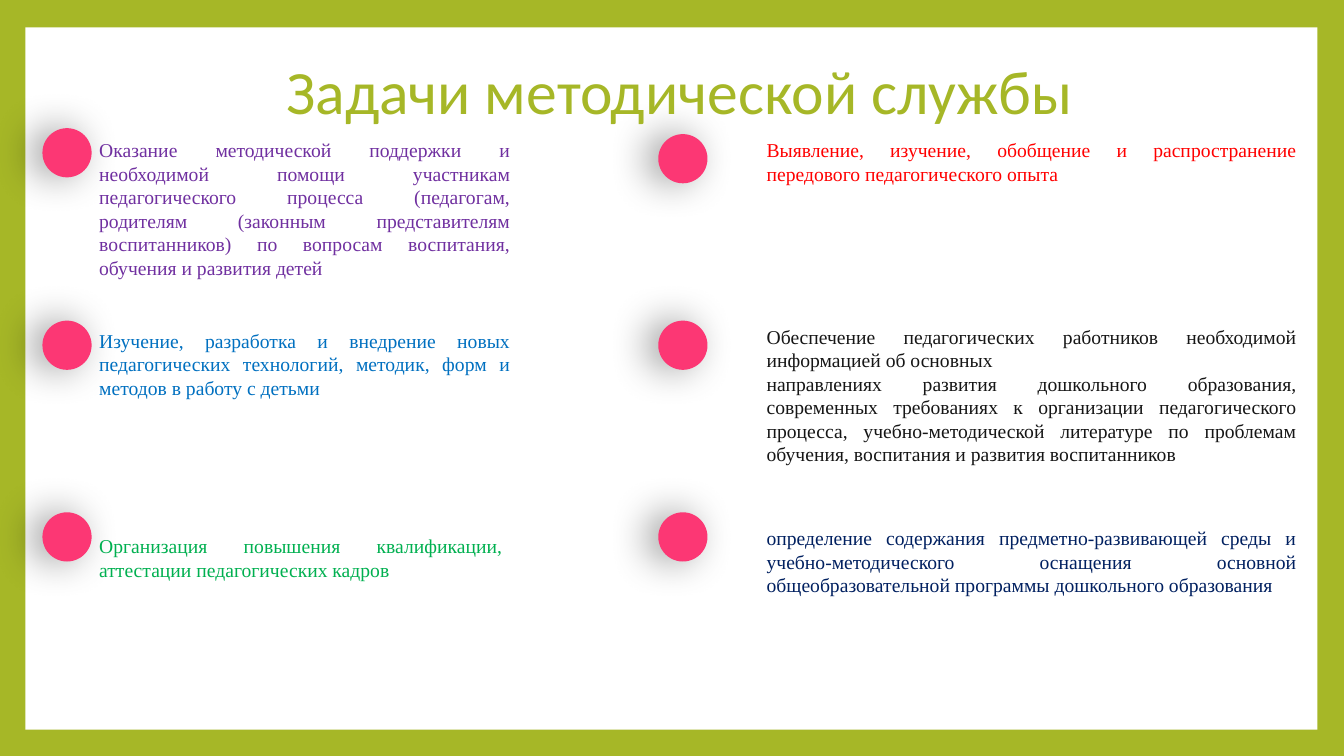
from dataclasses import dataclass

from lxml import etree
from pptx import Presentation
from pptx import util as u
from pptx.dml import color
from pptx.enum import shapes, text
from pptx.oxml import ns


@dataclass(frozen=True)
class Theme:
    green: str = "A6B727"
    panel: str = "FFFFFF"
    dot: str = "FC3774"
    shadow: str = "000000"
    title_font: str = "Calibri"
    body_font: str = "Times New Roman"
    title_size: int = 44
    body_size: int = 14


@dataclass(frozen=True)
class Column:
    dot_left: float
    text_left: float
    text_width: float


@dataclass(frozen=True)
class Task:
    column: Column
    dot_top: float
    text_top: float
    height: float
    ink: str
    words: str


THEME = Theme()
DOT_SIZE = 1.24
LEFT = Column(1.07, 2.31, 10.74)
LEFT_NARROW = Column(1.07, 2.31, 10.54)
RIGHT = Column(16.59, 19.13, 13.74)

TASKS = [
    Task(LEFT, 3.23, 3.38, 3.78, "7030A0",
         "Оказание методической поддержки и необходимой помощи участникам "
         "педагогического процесса (педагогам, родителям (законным представителям "
         "воспитанников) по вопросам воспитания, обучения и развития детей"),
    Task(LEFT, 8.08, 8.18, 1.98, "0070C0",
         "Изучение, разработка и внедрение новых педагогических технологий, "
         "методик, форм и методов в работу с детьми"),
    Task(LEFT_NARROW, 12.91, 13.36, 1.42, "00B050",
         "Организация повышения квалификации, аттестации педагогических кадров"),
    Task(RIGHT, 3.38, 3.38, 2.31, "FF0000",
         "Выявление, изучение, обобщение и распространение передового "
         "педагогического опыта"),
    Task(RIGHT, 8.08, 8.08, 4.83, "161616",
         "Обеспечение педагогических работников необходимой информацией об основных\n"
         "направлениях развития дошкольного образования, современных требованиях "
         "к организации педагогического процесса, учебно-методической литературе "
         "по проблемам обучения, воспитания и развития воспитанников"),
    Task(RIGHT, 12.91, 13.16, 1.98, "002060",
         "определение содержания предметно-развивающей среды и "
         "учебно-методического оснащения основной общеобразовательной программы "
         "дошкольного образования"),
]


def add_figure(page, kind, left: float, top: float, width: float, height: float,
               fill: str):
    figure = page.shapes.add_shape(
        kind, u.Cm(left), u.Cm(top), u.Cm(width), u.Cm(height))
    figure.fill.solid()
    figure.fill.fore_color.rgb = color.RGBColor.from_string(fill)
    figure.line.fill.background()
    figure.shadow.inherit = False
    return figure


def add_shadow(figure) -> None:
    effects = figure.element.spPr.find(ns.qn("a:effectLst"))
    shadow = etree.SubElement(
        effects, ns.qn("a:outerShdw"), blurRad=str(u.Pt(29)), dist=str(u.Pt(8)),
        dir="10800000", algn="r", rotWithShape="0")
    tint = etree.SubElement(shadow, ns.qn("a:srgbClr"), val=THEME.shadow)
    etree.SubElement(tint, ns.qn("a:alpha"), val="40000")


def add_text(page, words: str, *, left: float, top: float, width: float,
             height: float, font: str, size: int, ink: str,
             align=text.PP_ALIGN.JUSTIFY, anchor=text.MSO_ANCHOR.TOP,
             spacing: float = 1.0, side: float = 0.19, edge: float = 0.1) -> None:
    box = page.shapes.add_textbox(u.Cm(left), u.Cm(top), u.Cm(width), u.Cm(height))
    frame = box.text_frame
    frame.word_wrap = True
    frame.vertical_anchor = anchor
    frame.margin_left = frame.margin_right = u.Cm(side)
    frame.margin_top = frame.margin_bottom = u.Cm(edge)
    frame.text = words
    for para in frame.paragraphs:
        para.alignment = align
        para.line_spacing = spacing
        for span in para.runs:
            span.font.name = font
            span.font.size = u.Pt(size)
            span.font.color.rgb = color.RGBColor.from_string(ink)


def add_task(page, task: Task) -> None:
    dot = add_figure(page, shapes.MSO_SHAPE.OVAL, task.column.dot_left,
                     task.dot_top, DOT_SIZE, DOT_SIZE, THEME.dot)
    add_shadow(dot)
    add_text(page, task.words, left=task.column.text_left, top=task.text_top,
             width=task.column.text_width, height=task.height,
             font=THEME.body_font, size=THEME.body_size, ink=task.ink)


def main() -> None:
    deck = Presentation()
    deck.slide_width, deck.slide_height = u.Cm(33.87), u.Cm(19.05)
    page = deck.slides.add_slide(deck.slide_layouts[6])
    page.background.fill.solid()
    page.background.fill.fore_color.rgb = color.RGBColor.from_string(THEME.green)
    add_figure(page, shapes.MSO_SHAPE.RECTANGLE, 0.64, 0.69, 32.56, 17.7, THEME.panel)
    for task in TASKS:
        add_task(page, task)
    add_text(page, "Задачи методической службы", left=3.43, top=1.22, width=27.43,
             height=2.31, font=THEME.title_font, size=THEME.title_size,
             ink=THEME.green, align=text.PP_ALIGN.CENTER,
             anchor=text.MSO_ANCHOR.MIDDLE, spacing=0.9, side=0.25, edge=0.13)
    deck.save("out.pptx")


if __name__ == "__main__":
    main()
